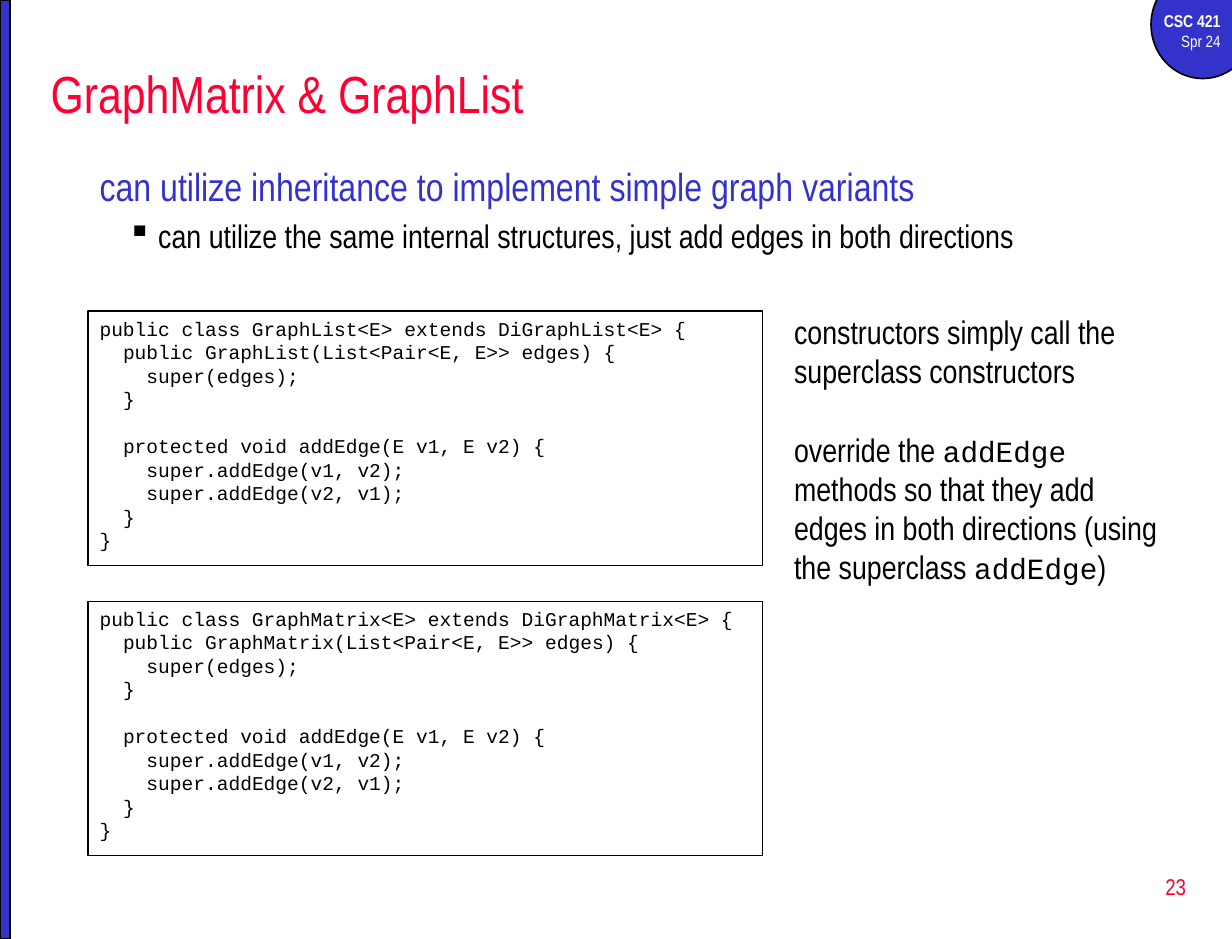
from dataclasses import dataclass

from lxml.etree import SubElement
from pptx import Presentation
from pptx.dml.color import RGBColor
from pptx.enum.shapes import MSO_SHAPE
from pptx.enum.text import MSO_ANCHOR, PP_ALIGN
from pptx.oxml.ns import qn
from pptx.util import Pt

SANS, MONO = "Arial Narrow", "Courier New"
BLUE, RED, BLACK, WHITE = "3333CC", "FF0033", "000000", "FFFFFF"
CHAR_WIDTH = 7.2
CODE_LINE = 14.4


@dataclass
class Box:
    left: float
    top: float
    width: float
    height: float

    def lengths(self):
        return [Pt(v) for v in (self.left, self.top, self.width, self.height)]


@dataclass
class CodeBox:
    name: str
    top: float

    def lines(self) -> list[str]:
        return f"""public class {self.name}<E> extends Di{self.name}<E> {{
  public {self.name}(List<Pair<E, E>> edges) {{
    super(edges);
  }}

  protected void addEdge(E v1, E v2) {{
    super.addEdge(v1, v2);
    super.addEdge(v2, v1);
  }}
}}""".split("\n")


def rgb(color: str) -> RGBColor:
    return RGBColor.from_string(color)


def style(font, size: float, color: str, name: str = SANS, bold: bool = False):
    font.name, font.size, font.bold = name, Pt(size), bold
    font.color.rgb = rgb(color)


def indent(p, left: float, first: float = 0):
    """Set the left margin and first-line offset of a paragraph."""
    pPr = p._p.get_or_add_pPr()
    pPr.set("marL", str(Pt(left)))
    pPr.set("indent", str(Pt(first)))
    return pPr


def add_shape(s, kind, box: Box, line_width: float, fill: str | None = None):
    sp = s.shapes.add_shape(kind, *box.lengths())
    sp.shadow.inherit = False
    if fill:
        sp.fill.solid()
        sp.fill.fore_color.rgb = rgb(fill)
    else:
        sp.fill.background()
    sp.line.color.rgb = rgb(BLACK)
    sp.line.width = Pt(line_width)
    return sp


def add_text_frame(s, box: Box, anchor=MSO_ANCHOR.TOP, wrap: bool = True):
    tf = s.shapes.add_textbox(*box.lengths()).text_frame
    tf.word_wrap = wrap
    tf.vertical_anchor = anchor
    return tf


def add_paragraph(tf, text: str, size: float, color: str, bold: bool = False,
                  align=PP_ALIGN.LEFT, before: float = 0):
    """Fill the first paragraph if it is still empty, otherwise append one."""
    p = tf.add_paragraph() if tf.text else tf.paragraphs[0]
    p.text = text
    p.alignment = align
    p.space_before = Pt(before)
    style(p.font, size, color, bold=bold)
    return p


def add_code(s, code: CodeBox):
    sp = add_shape(s, MSO_SHAPE.RECTANGLE, Box(54, code.top, 414, 156), 0.75)
    tf = sp.text_frame
    tf.word_wrap = True
    tf.vertical_anchor = MSO_ANCHOR.TOP
    gap = 0
    for line in code.lines():
        text = line.lstrip()
        if not text:
            gap = CODE_LINE
            continue
        p = add_paragraph(tf, text, 12, BLACK, before=gap)
        p.font.name = MONO
        p.line_spacing = Pt(CODE_LINE)
        indent(p, (len(line) - len(text)) * CHAR_WIDTH)
        gap = 0


def add_badge(s):
    add_shape(s, MSO_SHAPE.OVAL, Box(706.3, -18, 63.4, 66.2), 1, BLUE)
    tf = add_text_frame(s, Box(696.2, 2.9, 59.8, 33.1))
    add_paragraph(tf, "CSC 421", 10.5, WHITE, True, PP_ALIGN.RIGHT)
    add_paragraph(tf, "Spr 24", 10, WHITE, align=PP_ALIGN.RIGHT)


def add_summary(s):
    tf = add_text_frame(s, Box(54, 95.8, 666, 66.2))
    add_paragraph(tf, "can utilize inheritance to implement simple graph variants",
                  24, BLUE, before=4.8)
    p = add_paragraph(tf, "can utilize the same internal structures, "
                      "just add edges in both directions", 20, BLACK, before=4)
    p.level = 1
    SubElement(indent(p, 36, -18.7), qn("a:buChar")).set("char", "▪")


def add_remarks(s):
    tf = add_text_frame(s, Box(480.2, 187.9, 239.8, 200.9))
    add_paragraph(tf, "constructors simply call the superclass constructors", 20, BLACK)
    p = tf.add_paragraph()
    p.space_before = Pt(24)
    for text, size, name in (
        ("override the ", 20, SANS),
        ("addEdge ", 18, MONO),
        ("methods so that they add edges in both directions "
         "(using the superclass ", 20, SANS),
        ("addEdge", 18, MONO),
        (")", 20, SANS),
    ):
        r = p.add_run()
        r.text = text
        style(r.font, size, BLACK, name)


def main():
    prs = Presentation()
    prs.slide_width, prs.slide_height = Pt(756), Pt(576)
    s = prs.slides.add_slide(prs.slide_layouts[6])

    add_badge(s)
    add_shape(s, MSO_SHAPE.RECTANGLE, Box(0, 0, 6, 576), 1, BLUE)
    title = add_text_frame(s, Box(24, 30, 714, 54), MSO_ANCHOR.MIDDLE)
    add_paragraph(title, "GraphMatrix & GraphList", 32, RED)
    add_summary(s)
    for code in (CodeBox("GraphList", 190.8), CodeBox("GraphMatrix", 368.8)):
        add_code(s, code)
    add_remarks(s)
    number = add_text_frame(s, Box(577.5, 525, 157.5, 38), MSO_ANCHOR.MIDDLE, False)
    add_paragraph(number, "23", 14, RED, align=PP_ALIGN.RIGHT)

    prs.save("out.pptx")


if __name__ == "__main__":
    main()
